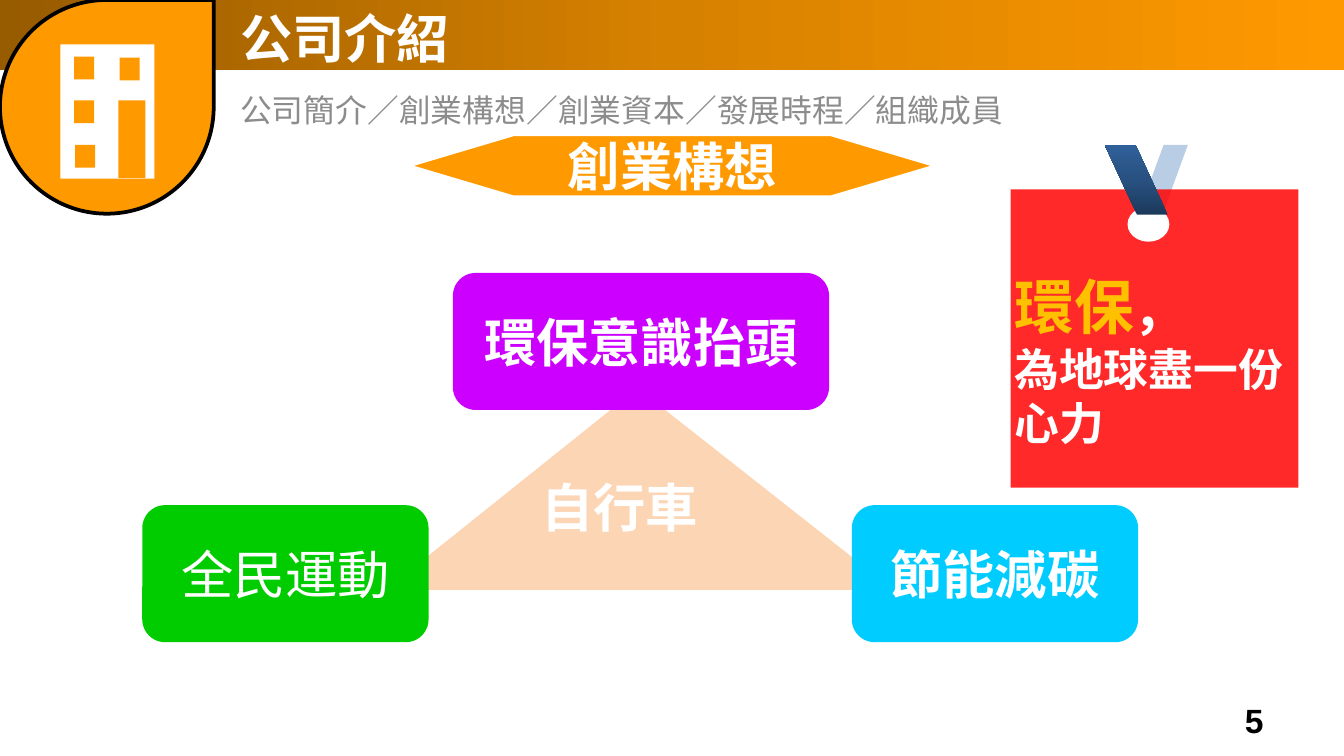
from lxml.etree import SubElement
from pptx import Presentation
from pptx.dml.color import RGBColor
from pptx.enum.shapes import MSO_SHAPE as Kind
from pptx.enum.text import MSO_ANCHOR as Anchor, PP_ALIGN as Align
from pptx.oxml.ns import qn
from pptx.util import Cm, Pt

HUES = {
    "white": "FFFFFF", "black": "000000", "grey": "8C8C8C",
    "orange": "FF9900", "brown": "975B00", "amber": "D78100",
    "gold": "FFC000", "peach": "FCD5B5", "red": "FF0000",
    "purple": "CC00FF", "green": "00CC00", "cyan": "00CCFF",
    "pale": "B9CDE5", "navy": "1C395B", "steel": "285181", "blue": "306099",
}


def color(name):
    return RGBColor.from_string(HUES[name])


def shape(slide, kind, box, fill, line=None, adj=None):
    item = slide.shapes.add_shape(kind, *map(Cm, box))
    item.shadow.inherit = False
    item.fill.solid()
    item.fill.fore_color.rgb = color(fill)
    if line:
        item.line.color.rgb = color(line)
        item.line.width = Pt(2)
    else:
        item.line.fill.background()
    if adj is not None:
        item.adjustments[0] = adj
    return item


def blend(item, names, angle=0):
    """Fill with evenly spaced gradient stops."""
    item.fill.gradient()
    item.fill.gradient_angle = angle
    stops = item.element.spPr.find(qn("a:gradFill")).find(qn("a:gsLst"))
    for stop in list(stops):
        stops.remove(stop)
    for i, name in enumerate(names):
        stop = SubElement(stops, qn("a:gs"), pos=str(100000 * i // (len(names) - 1)))
        SubElement(stop, qn("a:srgbClr"), val=HUES[name])


def write(para, text, size=28, hue="white", bold=True, align=Align.LEFT):
    para.alignment = align
    run = para.add_run()
    run.text = text
    run.font.name = "Arial"
    run.font.size = Pt(size)
    run.font.bold = bold
    run.font.color.rgb = color(hue)


def label(slide, box, text, anchor=Anchor.TOP, **style):
    frame = slide.shapes.add_textbox(*map(Cm, box)).text_frame
    frame.word_wrap = True
    frame.vertical_anchor = anchor
    para = frame.paragraphs[0]
    write(para, text, **style)
    return frame


def card(slide, kind, box, fill, text, line=None, bold=True):
    """Draw a filled shape with centred text."""
    frame = shape(slide, kind, box, fill, line).text_frame
    frame.vertical_anchor = Anchor.MIDDLE
    write(frame.paragraphs[0], text, bold=bold, align=Align.CENTER)


def badge(slide, x, y, size):
    shape(slide, Kind.TEAR, (x, y, size, size), "orange", "black")
    shape(slide, Kind.RECTANGLE, (x + 1.14, y + 0.84, 1.78, 2.54), "white")
    panes = [(2.26, 1.09), (1.4, 1.07), (1.4, 1.9), (1.42, 2.74)]
    for dx, dy in panes:
        shape(slide, Kind.RECTANGLE, (x + dx, y + dy, 0.38, 0.43), "orange")
    shape(slide, Kind.RECTANGLE, (x + 2.24, y + 1.9, 0.51, 1.47), "orange")


def header(slide, x, y, w, h):
    bar = shape(slide, Kind.RECTANGLE, (x, y, w, h), "orange")
    blend(bar, ["brown", "amber", "orange"])
    badge(slide, x, y, 4.04)
    label(slide, (x + 4.29, y, 5.21, 1.45), "公司介紹")
    path_line = label(slide, (x + 4.29, y + 1.6, 15.01, 0.94),
                      "公司簡介／創業構想／創業資本／發展時程／組織成員",
                      size=17, hue="grey", bold=False)
    path_line.paragraphs[0].space_before = Pt(3.4)


def idea(slide, x, y, w, h):
    """Draw the triangle with a card at each corner."""
    high, wide, top = 2.59, 5.41, 7.11
    low = y + h - high
    shape(slide, Kind.ISOSCELES_TRIANGLE, (x + 4.6, y + 2.18, 9.6, 3.81),
          "peach", adj=0.496)
    label(slide, (x + 7, y + 3.69, 4.04, 1.45), "自行車",
          anchor=Anchor.MIDDLE, align=Align.CENTER)
    cards = [
        (x + w - wide, low, wide, "cyan", "節能減碳", True),
        (x, low, wide, "green", "全民運動", False),
        (x + 5.87, y, top, "purple", "環保意識抬頭", True),
    ]
    for left, rise, span, fill, text, bold in cards:
        card(slide, Kind.ROUNDED_RECTANGLE, (left, rise, span, high),
             fill, text, bold=bold)


def tag(slide, x, y, w, h):
    """Draw the red tag hung on a ribbon."""
    drop, fall = 0.84, 1.32
    shape(slide, Kind.PARALLELOGRAM, (x + 2.41, y, 0.94, fall), "pale", adj=0.512)
    sheet = shape(slide, Kind.RECTANGLE, (x, y + drop, w, h - drop), "red")
    tint = sheet.element.spPr.find(qn("a:solidFill"))[0]
    SubElement(tint, qn("a:alpha"), val="84000")
    shape(slide, Kind.OVAL, (x + 2.21, y + 1.17, 0.79, 0.66), "white")
    band = shape(slide, Kind.PARALLELOGRAM, (x + 1.78, y, 1.19, fall), "navy", adj=0.512)
    band.element.spPr.find(qn("a:xfrm")).set("flipH", "1")
    blend(band, ["navy", "steel", "blue"], angle=90)
    frame = label(slide, (x - 0.18, y + 2.24, 5.97, 3.68), "環保", size=32, hue="gold")
    write(frame.paragraphs[0], "，")
    write(frame.add_paragraph(), "為地球盡一份心力", size=24)


def main():
    deck = Presentation()
    deck.slide_width, deck.slide_height = Cm(25.4), Cm(14.29)
    slide = deck.slides.add_slide(deck.slide_layouts[6])
    header(slide, 0, 0, 25.4, 1.32)
    card(slide, Kind.FLOWCHART_PREPARATION, (7.7, 2.54, 10.01, 1.19),
         "orange", "創業構想", line="white")
    idea(slide, 2.69, 5.16, 18.82, 6.98)
    tag(slide, 19.1, 2.74, 5.44, 6.48)
    label(slide, (18.21, 13.23, 5.92, 0.76), "5", anchor=Anchor.MIDDLE,
          size=18, hue="black", align=Align.RIGHT)
    deck.save("out.pptx")


if __name__ == "__main__":
    main()
